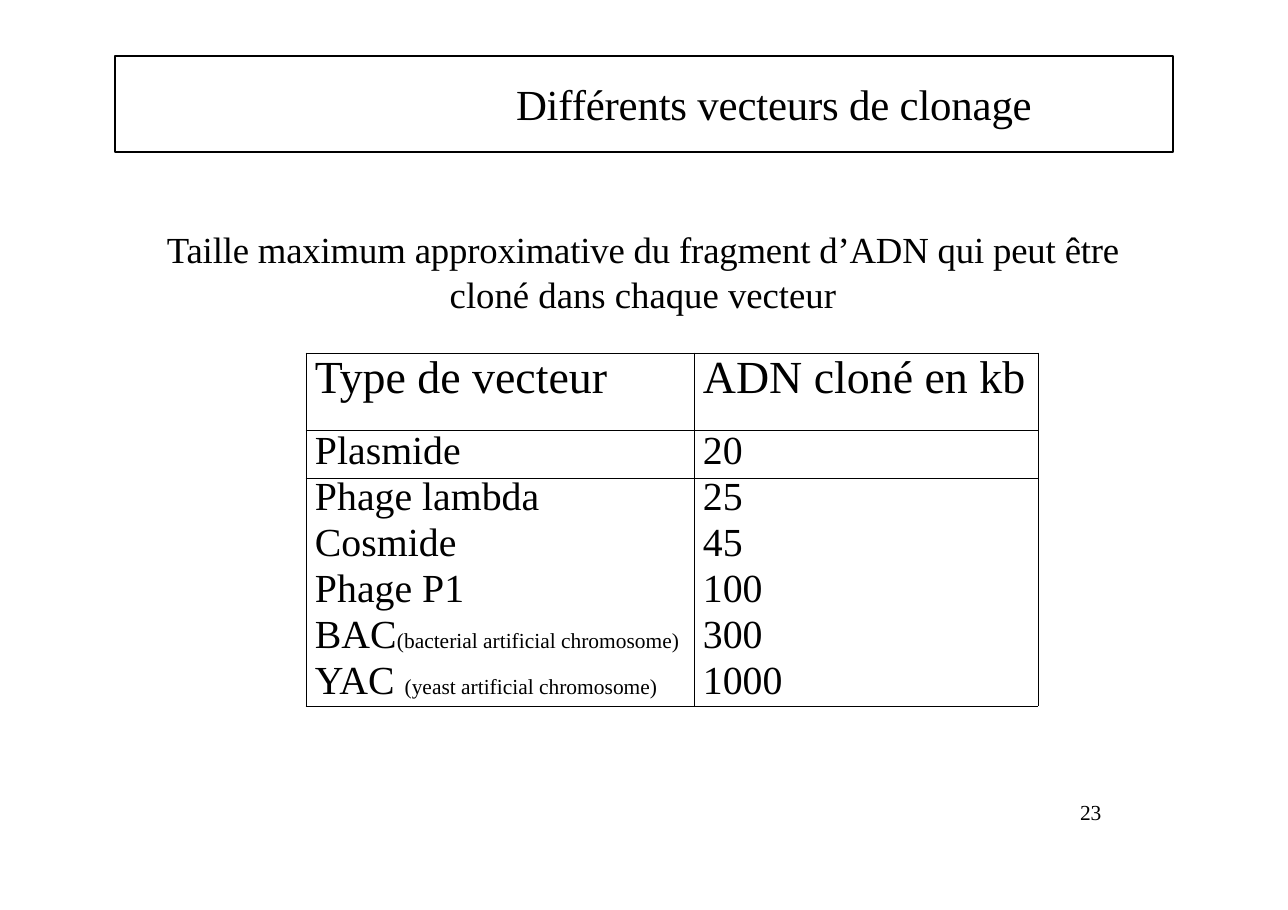
from lxml.etree import SubElement
from pptx import Presentation
from pptx.dml.color import RGBColor
from pptx.enum.text import MSO_ANCHOR, MSO_AUTO_SIZE, PP_ALIGN
from pptx.oxml.ns import qn
from pptx.util import Emu, Pt

EMU_PER_PX = 8298
FONT = "Times New Roman"
BLACK = RGBColor(0, 0, 0)

VECTORS = [
    ("Type de vecteur", "", "ADN cloné en kb"),
    ("Plasmide", "", "20"),
    ("Phage lambda", "", "25"),
    ("Cosmide", "", "45"),
    ("Phage P1", "", "100"),
    ("BAC", "(bacterial artificial chromosome)", "300"),
    ("YAC ", "(yeast artificial chromosome)", "1000"),
]
COL_WIDTHS = [388, 344]
ROW_HEIGHTS = [77, 48, 46, 46, 46, 46, 44]
RULED_BELOW = {0, 1, len(VECTORS) - 1}


def px(n):
    return Emu(n * EMU_PER_PX)


def place(sp, left, top, width, height):
    sp.left, sp.top, sp.width, sp.height = map(px, (left, top, width, height))


def add_text(p, text, size=26, spacing=0, align=PP_ALIGN.LEFT, before=0, line=None):
    p.alignment = align
    p.space_before = Pt(before)
    p.line_spacing = Pt(line) if line else 1.0
    r = p.add_run()
    r.text = text
    r.font.name = FONT
    r.font.size = Pt(size)
    r.font.bold = False
    r.font.color.rgb = BLACK
    if spacing:
        r.font._element.set("spc", str(round(spacing * 100)))


def set_frame(tf, inset_left=0, inset_top=0):
    tf.word_wrap = True
    tf.auto_size = MSO_AUTO_SIZE.NONE
    tf.vertical_anchor = MSO_ANCHOR.TOP
    tf.margin_left, tf.margin_top = px(inset_left), px(inset_top)
    tf.margin_right = tf.margin_bottom = 0
    return tf


def add_title(s):
    sp = s.shapes.title
    place(sp, 115, 56, 1058, 96)
    sp.line.color.rgb = BLACK
    sp.line.width = Pt(0.75)
    tf = set_frame(sp.text_frame, inset_left=401, inset_top=22)
    add_text(tf.paragraphs[0], "Différents vecteurs de clonage", size=28, spacing=-0.1)


def add_box(s, left, top, width, height, **insets):
    sp = s.shapes.add_textbox(*map(px, (left, top, width, height)))
    return set_frame(sp.text_frame, **insets)


def set_borders(cell, **sides):
    tcPr = cell._tc.get_or_add_tcPr()
    for side in "LRTB":
        ln = SubElement(tcPr, qn(f"a:ln{side}"), w=str(Pt(0.5)))
        if sides.get(side, True):
            fill = SubElement(ln, qn("a:solidFill"))
            SubElement(fill, qn("a:srgbClr"), val=str(BLACK))
        else:
            SubElement(ln, qn("a:noFill"))


def add_vector_table(s):
    frame = s.shapes.add_table(
        len(VECTORS), len(COL_WIDTHS), px(306), px(353),
        px(sum(COL_WIDTHS)), px(sum(ROW_HEIGHTS)))
    table = frame.table
    table.first_row = table.horz_banding = False
    for col, width in zip(table.columns, COL_WIDTHS):
        col.width = px(width)
    for i, (name, note, size_kb) in enumerate(VECTORS):
        table.rows[i].height = px(ROW_HEIGHTS[i])
        size, line = (30, 33) if i == 0 else (26, 28.2 if i == 1 else 27)
        for cell, text in zip(table.rows[i].cells, (name, size_kb)):
            cell.margin_left = px(9)
            cell.margin_top = cell.margin_right = cell.margin_bottom = 0
            cell.vertical_anchor = MSO_ANCHOR.TOP
            set_borders(cell, T=i == 0 or i - 1 in RULED_BELOW, B=i in RULED_BELOW)
            cell.fill.background()
            add_text(cell.text_frame.paragraphs[0], text, size=size, line=line)
        if note:
            add_text(table.cell(i, 0).text_frame.paragraphs[0], note, size=14, line=line)


def main():
    prs = Presentation()
    prs.slide_width, prs.slide_height = px(1288), px(910)
    s = prs.slides.add_slide(prs.slide_layouts[5])

    tf = add_box(s, 1077, 803, 28, 24, inset_left=3)
    add_text(tf.paragraphs[0], "23", size=14, line=14.4)

    tf = add_box(s, 160, 226, 966, 92, inset_top=1)
    add_text(tf.paragraphs[0],
             "Taille maximum approximative du fragment d’ADN qui peut être",
             size=24, spacing=-0.1, align=PP_ALIGN.CENTER, before=1)
    add_text(tf.add_paragraph(), "cloné dans chaque vecteur",
             size=24, align=PP_ALIGN.CENTER, before=0.2)

    add_vector_table(s)
    add_title(s)
    prs.save("out.pptx")


if __name__ == "__main__":
    main()
